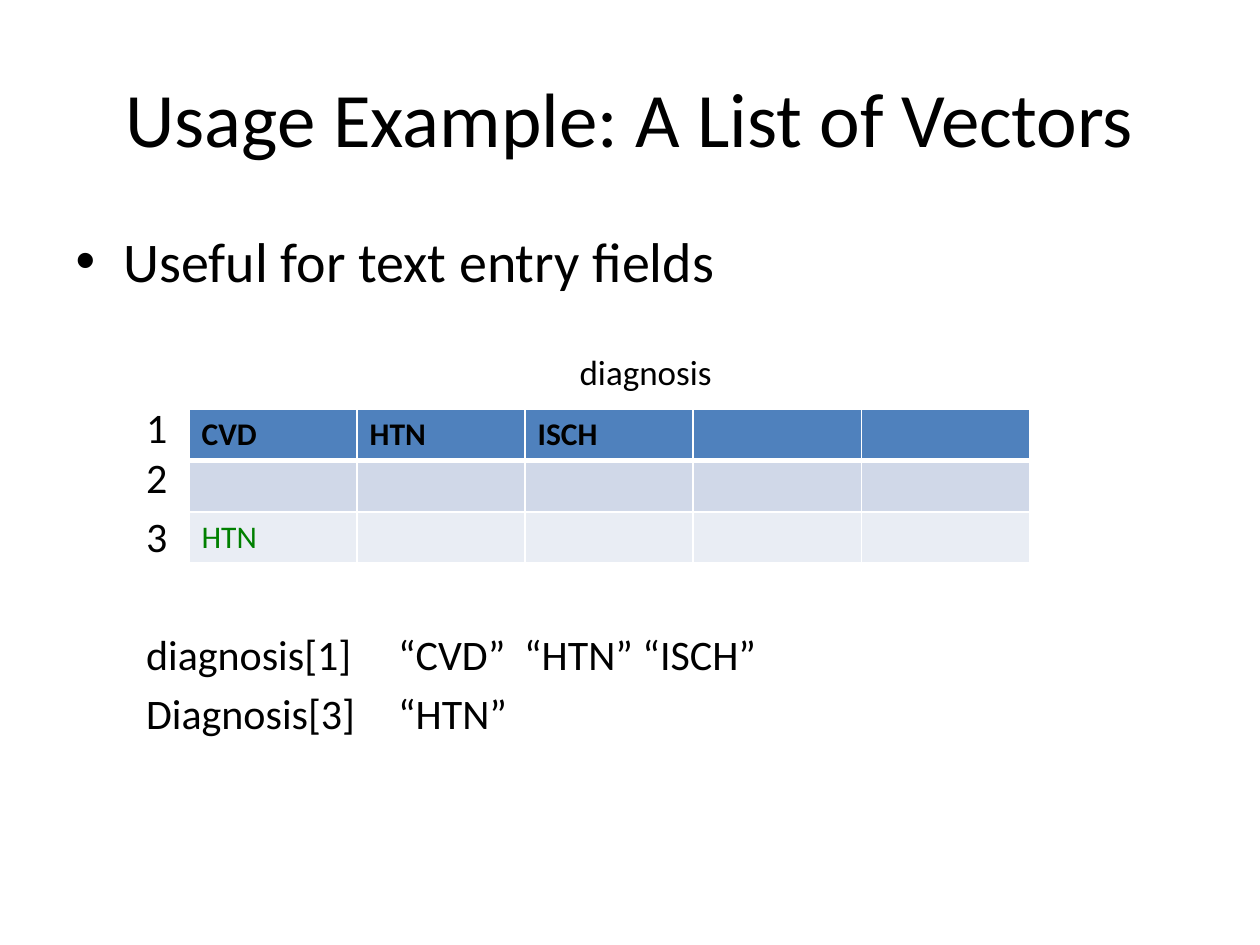
from dataclasses import dataclass

import pptx
import pptx.dml.color
import pptx.enum.text
import pptx.oxml
import pptx.oxml.ns
import pptx.util

Inches = pptx.util.Inches
Pt = pptx.util.Pt

FONT = "Calibri"
BLACK, WHITE, GREEN = "000000", "FFFFFF", "008000"
ROW_FILLS = ["4F81BD", "D0D8E8", "E9EDF4"]
ROWS = [["CVD", "HTN", "ISCH", "", ""], [""] * 5, ["HTN", "", "", "", ""]]


@dataclass
class BodyLine:
    text: str
    size: float
    before: float
    margin: float = 0.56
    bullet: bool = False


BODY_LINES = [
    BodyLine("Useful for text entry fields", 32, 6.4, 0.38, True),
    BodyLine("diagnosis", 20, 32.4, 4),
    BodyLine("1", 24, 4.8),
    BodyLine("2", 24, 0),
    BodyLine("3", 24, 4.8),
    BodyLine("diagnosis[1]\t“CVD”\t“HTN” “ISCH”", 24, 38.9),
    BodyLine("Diagnosis[3]\t“HTN”", 24, 4.8),
]


def rgb(value: str) -> pptx.dml.color.RGBColor:
    return pptx.dml.color.RGBColor.from_string(value)


def format_spans(para, size: float, color: str = BLACK, bold: bool = False) -> None:
    for span in para.runs:
        span.font.name = FONT
        span.font.size = Pt(size)
        span.font.bold = bold
        span.font.color.rgb = rgb(color)


def place(box, left: float, top: float, width: float, height: float) -> None:
    box.left, box.top = Inches(left), Inches(top)
    box.width, box.height = Inches(width), Inches(height)


def write_line(para, line: BodyLine) -> None:
    para.text = line.text
    para.space_before = Pt(line.before)
    format_spans(para, line.size)
    properties = para._p.get_or_add_pPr()
    properties.set("marL", str(Inches(line.margin)))
    properties.set("indent", str(Inches(-line.margin if line.bullet else 0)))
    if not line.bullet:
        properties.append(pptx.oxml.parse_xml(
            f'<a:buNone {pptx.oxml.ns.nsdecls("a")}/>'))


def add_borders(cell, bottom: float, top: float) -> None:
    properties = cell._tc.get_or_add_tcPr()
    widths = {"lnL": 1, "lnR": 1, "lnT": top, "lnB": bottom}
    for index, (side, width) in enumerate(widths.items()):
        # Borders come before the fill in the cell properties
        properties.insert(index, pptx.oxml.parse_xml(
            f'<a:{side} {pptx.oxml.ns.nsdecls("a")} w="{Pt(width)}">'
            f'<a:solidFill><a:srgbClr val="{WHITE}"/></a:solidFill></a:{side}>'))


def add_diagnosis_table(page) -> None:
    table = page.shapes.add_table(
        len(ROWS), len(ROWS[0]),
        Inches(1.5), Inches(3.25), Inches(6.67), Inches(1.22)).table
    for row_index, texts in enumerate(ROWS):
        header = row_index == 0
        for column_index, text in enumerate(texts):
            cell = table.cell(row_index, column_index)
            cell.text = text
            format_spans(cell.text_frame.paragraphs[0], 18,
                         BLACK if header else GREEN, header)
            cell.fill.solid()
            cell.fill.fore_color.rgb = rgb(ROW_FILLS[row_index])
            add_borders(cell, 3 if header else 1, 3 if row_index == 1 else 1)


def main() -> None:
    deck = pptx.Presentation()
    deck.slide_width, deck.slide_height = Inches(10), Inches(7.5)
    page = deck.slides.add_slide(deck.slide_layouts[1])
    page.background.fill.solid()
    page.background.fill.fore_color.rgb = rgb(WHITE)

    # Title
    title = page.shapes.title
    place(title, 0.5, 0.3, 9, 1.25)
    title.text_frame.text = "Usage Example: A List of Vectors"
    format_spans(title.text_frame.paragraphs[0], 44)

    # Bullet, table labels and the resulting values
    body = page.placeholders[1]
    place(body, 0.5, 1.75, 9, 4.95)
    frame = body.text_frame
    frame.auto_size = pptx.enum.text.MSO_AUTO_SIZE.NONE
    for index, line in enumerate(BODY_LINES):
        para = frame.add_paragraph() if index else frame.paragraphs[0]
        write_line(para, line)

    # Table of diagnoses
    add_diagnosis_table(page)

    deck.save("out.pptx")


if __name__ == "__main__":
    main()
